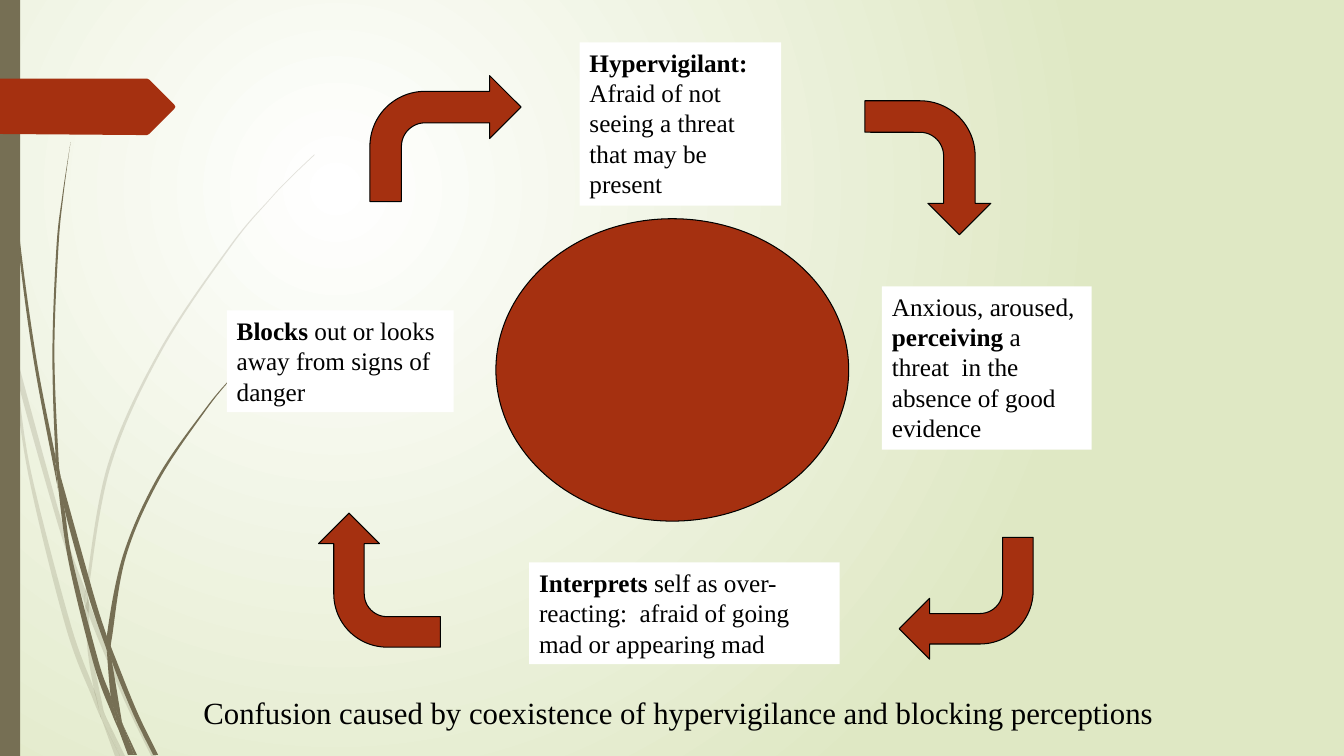
from dataclasses import dataclass

import lxml.etree
import pptx
import pptx.dml.color
import pptx.enum.shapes
import pptx.enum.text
import pptx.oxml.ns
import pptx.util
from pptx.util import Inches

COLORS = {"stem": "766F54", "rust": "A53010", "black": "000000",
          "white": "FFFFFF", "sage": "DFE8C4"}
FONT = "Times New Roman"
PRESETS = pptx.enum.shapes.MSO_SHAPE
qn = pptx.oxml.ns.qn
Point = tuple[float, float]
Edge = list[Point]


@dataclass
class Frame:
    left: float
    top: float
    width: float
    height: float

    def lengths(self) -> list[int]:
        return [Inches(n) for n in (self.left, self.top, self.width, self.height)]


@dataclass
class Wisp:
    """One blade of grass: two curved edges that close into an outline."""
    out: Edge
    back: Edge


@dataclass
class Stage:
    frame: Frame
    spans: list[tuple[str, bool]]  # text, bold


@dataclass
class Turn:
    frame: Frame
    rotation: int


FAINT_WISPS = [
    Wisp([(.11, 3.5), (.09, 3.22), (0, 2.82)], [(0, 2.99), (.1, 3.44), (.11, 3.5)]),
    Wisp([(.14, 3.45), (.17, 3.76), (.58, 5.22), (.84, 5.99)], [(.85, 5.86), (.62, 5.2), (.14, 3.45)]),
    Wisp([(.88, 5.96), (.88, 6.1), (1.23, 6.94), (1.5, 7.5)],
         [(1.55, 7.5), (1.27, 6.92), (.92, 6.07), (.88, 5.96)]),
    Wisp([(1.05, 7.11), (1.19, 7.5)], [(1.24, 7.5), (1.05, 7.11)]),
    Wisp([(.11, 3.5), (.28, 4.7), (.65, 6.21), (.92, 6.93), (1.01, 7.14)],
         [(.99, 7.07), (.93, 6.83), (.7, 6.19), (.31, 4.69), (.17, 3.76), (.11, 3.5)]),
    Wisp([(.84, 5.99), (.87, 6.46), (.93, 6.83), (.96, 6.92), (1.05, 7.11)],
         [(1.03, 7.06), (.91, 6.46), (.88, 6.1), (.84, 5.99)]),
    Wisp([(.88, 5.96), (.88, 5.84), (1.1, 4.62), (1.6, 3.49), (2.29, 2.45), (2.68, 1.98), (2.9, 1.75),
          (3.12, 1.54)],
         [(3.12, 1.53), (2.89, 1.75), (2.68, 1.97), (2.28, 2.44), (1.58, 3.48), (1.07, 4.61), (.85, 5.84),
          (.85, 5.86)]),
    Wisp([(1.01, 7.14), (1.14, 7.5)], [(1.19, 7.5), (1.01, 7.14)]),
    Wisp([(.85, 5.86), (.84, 5.99), (.88, 6.08)], [(.88, 6.1), (.88, 5.96), (.85, 5.86)]),
    Wisp([(.93, 6.83), (.99, 7.07), (1.01, 7.14), (1.19, 7.5)], [(1.05, 7.11), (.96, 6.92), (.93, 6.83)]),
]
SOLID_WISPS = [
    Wisp([(.03, 0), (.04, .48), (.07, 1.1), (.17, 2.33), (.33, 3.55), (.56, 4.77), (.57, 4.81)],
         [(.55, 4.57), (.55, 4.53), (.36, 3.55), (.19, 2.32), (.08, 1.09), (.05, .48), (.04, 0)]),
    Wisp([(.6, 4.72), (.64, 5.05), (.88, 5.92), (1.06, 6.45)],
         [(1.06, 6.33), (1.06, 6.31), (.93, 5.9), (.6, 4.72)]),
    Wisp([(1.1, 6.41), (1.11, 6.56), (1.32, 7.08), (1.52, 7.49)],
         [(1.57, 7.49), (1.36, 7.06), (1.13, 6.49), (1.1, 6.41)]),
    Wisp([(.57, 4.77), (.68, 5.57), (.93, 6.59), (1.11, 7.08), (1.17, 7.22)],
         [(1.16, 7.17), (1.1, 6.91), (.98, 6.57), (.72, 5.56), (.64, 5.05), (.57, 4.77)]),
    Wisp([(.6, 4.72), (.58, 4.53), (.54, 3.49), (.58, 2.45), (.63, 1.93), (.7, 1.41)],
         [(.7, 1.41), (.62, 1.93), (.56, 2.45), (.52, 3.49), (.55, 4.49), (.6, 4.72)]),
    Wisp([(1.22, 7.19), (1.33, 7.49)], [(1.36, 7.49), (1.22, 7.19)]),
    Wisp([(.55, 4.49), (.55, 4.53), (.57, 4.77), (.64, 5.05)], [(.6, 4.72), (.55, 4.49)]),
    Wisp([(1.1, 6.41), (1.11, 6.33), (1.25, 5.52), (1.58, 4.76), (2.05, 4.06), (2.31, 3.74), (2.45, 3.59),
          (2.61, 3.44)],
         [(2.6, 3.44), (2.45, 3.58), (2.31, 3.73), (2.04, 4.05), (1.56, 4.74), (1.22, 5.51), (1.06, 6.31),
          (1.1, 6.41)]),
    Wisp([(1.17, 7.22), (1.27, 7.49)], [(1.31, 7.49), (1.17, 7.22)]),
    Wisp([(1.06, 6.45), (1.1, 6.91), (1.16, 7.06), (1.22, 7.19)],
         [(1.21, 7.16), (1.11, 6.56), (1.09, 6.51), (1.06, 6.45)]),
    Wisp([(1.06, 6.31), (1.06, 6.45), (1.09, 6.51), (1.11, 6.56)], [(1.1, 6.41), (1.06, 6.31)]),
    Wisp([(1.1, 6.91), (1.16, 7.17), (1.17, 7.22), (1.3, 7.49)],
         [(1.33, 7.49), (1.22, 7.19), (1.16, 7.06), (1.1, 6.91)]),
]
TAG = [(0, .78), (1.46, .78), (1.48, .79), (1.73, 1.04), (1.74, 1.06), (1.73, 1.08),
       (1.48, 1.33), (1.46, 1.34), (1.36, 1.34), (0, 1.33)]

STAGES = [
    Stage(Frame(5.75, .42, 2, 1.62),
          [("Hypervigilant:  ", True), ("Afraid of not seeing a threat that may be present", False)]),
    Stage(Frame(8.75, 2.84, 2.08, 1.62),
          [("Anxious, aroused, ", False), ("perceiving", True),
           (" a threat  in the absence of good evidence", False)]),
    Stage(Frame(5.25, 5.58, 3.08, 1.01),
          [("Interprets", True),
           (" self as over-reacting:  afraid of going mad or appearing mad", False)]),
    Stage(Frame(2.25, 3.08, 2.25, 1.01),
          [("Blocks", True), (" out or looks away from signs of danger", False)]),
]
TURNS = [
    Turn(Frame(3.67, .75, 1.5, 1.25), 0),
    Turn(Frame(8.54, 1.04, 1.33, 1.25), 90),
    Turn(Frame(8.92, 5.33, 1.33, 1.21), 180),
    Turn(Frame(3.1, 5.15, 1.33, 1.21), 270),
]


def rgb(name: str) -> pptx.dml.color.RGBColor:
    return pptx.dml.color.RGBColor.from_string(COLORS[name])


def paint(shape, fill: str, outline: str | None = None) -> None:
    shape.shadow.inherit = False
    shape.fill.solid()
    shape.fill.fore_color.rgb = rgb(fill)
    if outline:
        shape.line.color.rgb = rgb(outline)
        shape.line.width = pptx.util.Pt(.75)
    else:
        shape.line.fill.background()


def add_outline(shapes, points: Edge, fill: str):
    corners = [(Inches(x), Inches(y)) for x, y in points]
    builder = shapes.build_freeform(*corners[0])
    builder.add_line_segments(corners[1:], close=True)
    outline = builder.convert_to_shape()
    paint(outline, fill)
    return outline


def bend(blade, turn: int) -> None:
    """Make each line a Bezier curve, except across the tip at point number turn."""
    knots = list(blade._element.iter(qn("a:pt")))
    spots = [(int(knot.get("x")), int(knot.get("y"))) for knot in knots]
    for edge in (range(turn), range(turn, len(spots))):
        for i in edge[1:]:
            before, after = spots[max(i - 2, edge[0])], spots[min(i + 1, edge[-1])]
            start, end = spots[i - 1], spots[i]
            segment = knots[i].getparent()
            segment.tag = qn("a:cubicBezTo")
            for place, (anchor, tail, head) in enumerate([(start, before, end), (end, after, start)]):
                x, y = (round(anchor[n] + (head[n] - tail[n]) / 6) for n in (0, 1))
                segment.insert(place, lxml.etree.Element(qn("a:pt"), x=str(x), y=str(y)))


def add_wisps(page, wisps: list[Wisp], opacity: int) -> None:
    group = page.shapes.add_group_shape()
    for wisp in wisps:
        blade = add_outline(group.shapes, wisp.out + wisp.back, "stem")
        bend(blade, len(wisp.out))
        if opacity < 100:
            color = blade._element.spPr.find(".//" + qn("a:srgbClr"))
            lxml.etree.SubElement(color, qn("a:alpha"), val=str(opacity * 1000))


def add_preset(page, preset, frame: Frame, fill: str, outline: str | None = None):
    shape = page.shapes.add_shape(preset, *frame.lengths())
    paint(shape, fill, outline)
    return shape


def write(box, spans: list[tuple[str, bool]], size: int) -> None:
    box.text_frame.word_wrap = True
    box.text_frame.auto_size = pptx.enum.text.MSO_AUTO_SIZE.SHAPE_TO_FIT_TEXT
    box.text_frame.vertical_anchor = pptx.enum.text.MSO_ANCHOR.TOP
    para = box.text_frame.paragraphs[0]
    para.alignment = pptx.enum.text.PP_ALIGN.LEFT
    para.font.name, para.font.size = FONT, pptx.util.Pt(size)
    para.font.color.rgb = rgb("black")
    for text, bold in spans:
        span = para.add_run()
        span.text, span.font.bold = text, bold


def set_background(page) -> None:
    fill = page.background.fill
    fill.gradient()
    for stop, name, position in zip(fill.gradient_stops, ("white", "sage"), (0, 1)):
        stop.color.rgb, stop.position = rgb(name), position
    linear = page._element.find(".//" + qn("a:lin"))
    glow = lxml.etree.Element(qn("a:path"), {"path": "circle"})
    lxml.etree.SubElement(glow, qn("a:fillToRect"), l="50000", t="50000", r="100000", b="100000")
    linear.getparent().replace(linear, glow)


def main() -> None:
    deck = pptx.Presentation()
    deck.slide_width, deck.slide_height = Inches(40 / 3), Inches(7.5)
    page = deck.slides.add_slide(deck.slide_layouts[6])
    # Backdrop: glow, grass, side bar and tag
    set_background(page)
    add_wisps(page, FAINT_WISPS, 20)
    add_wisps(page, SOLID_WISPS, 100)
    add_preset(page, PRESETS.RECTANGLE, Frame(0, 0, .2, 7.5), "stem")
    add_outline(page.shapes, TAG, "rust")
    # Cycle: hub, stages and the arrows between them
    add_preset(page, PRESETS.OVAL, Frame(4.92, 2.17, 3.5, 3), "rust", "black")
    for stage in STAGES:
        write(add_preset(page, PRESETS.RECTANGLE, stage.frame, "white"), stage.spans, 18)
    for turn in TURNS:
        add_preset(page, PRESETS.BENT_ARROW, turn.frame, "rust", "black").rotation = turn.rotation
    # Caption
    caption = page.shapes.add_textbox(*Frame(1.92, 6.83, 9.75, .47).lengths())
    write(caption, [("Confusion caused by coexistence of hypervigilance and blocking perceptions", False)], 22)
    deck.save("out.pptx")


if __name__ == "__main__":
    main()
